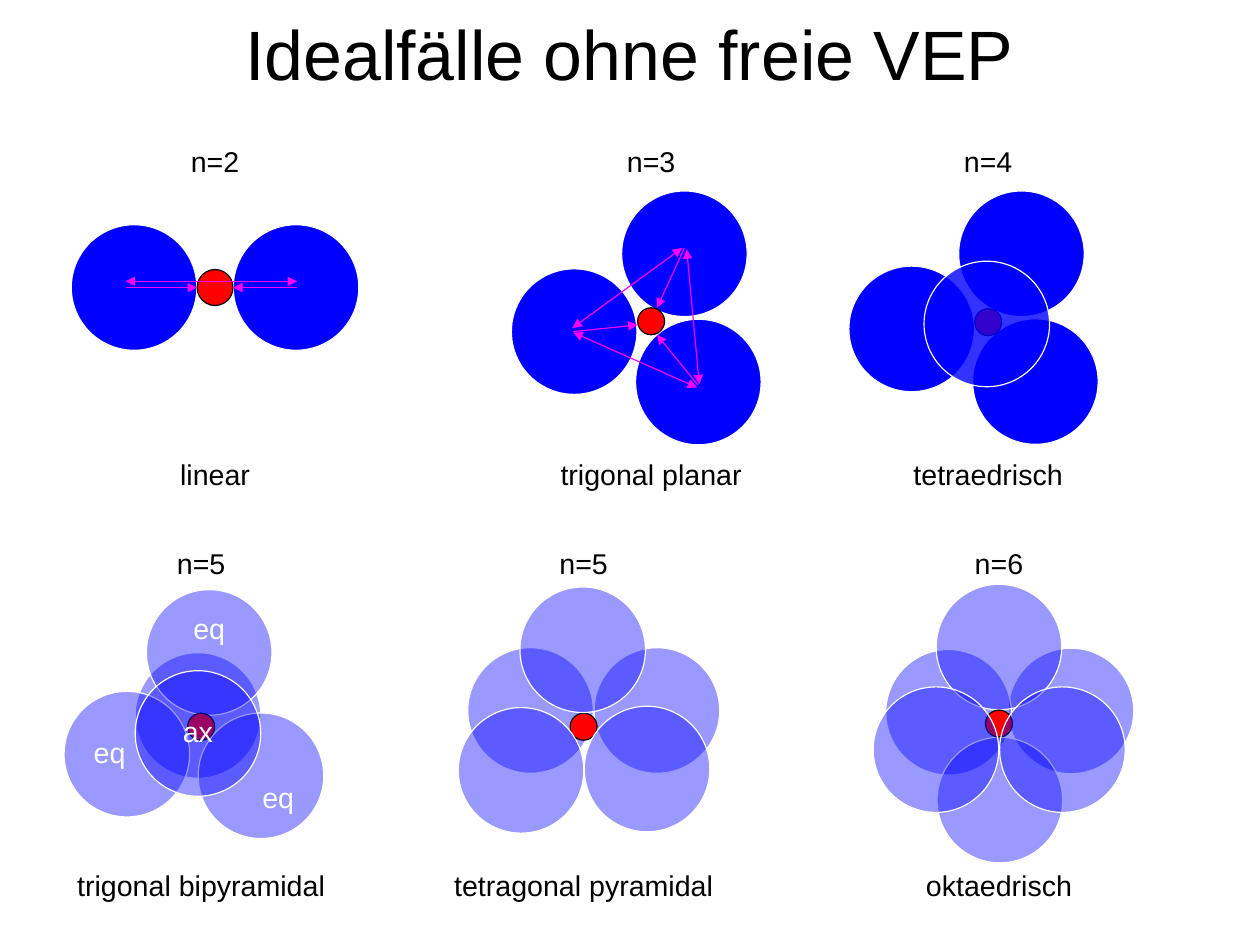
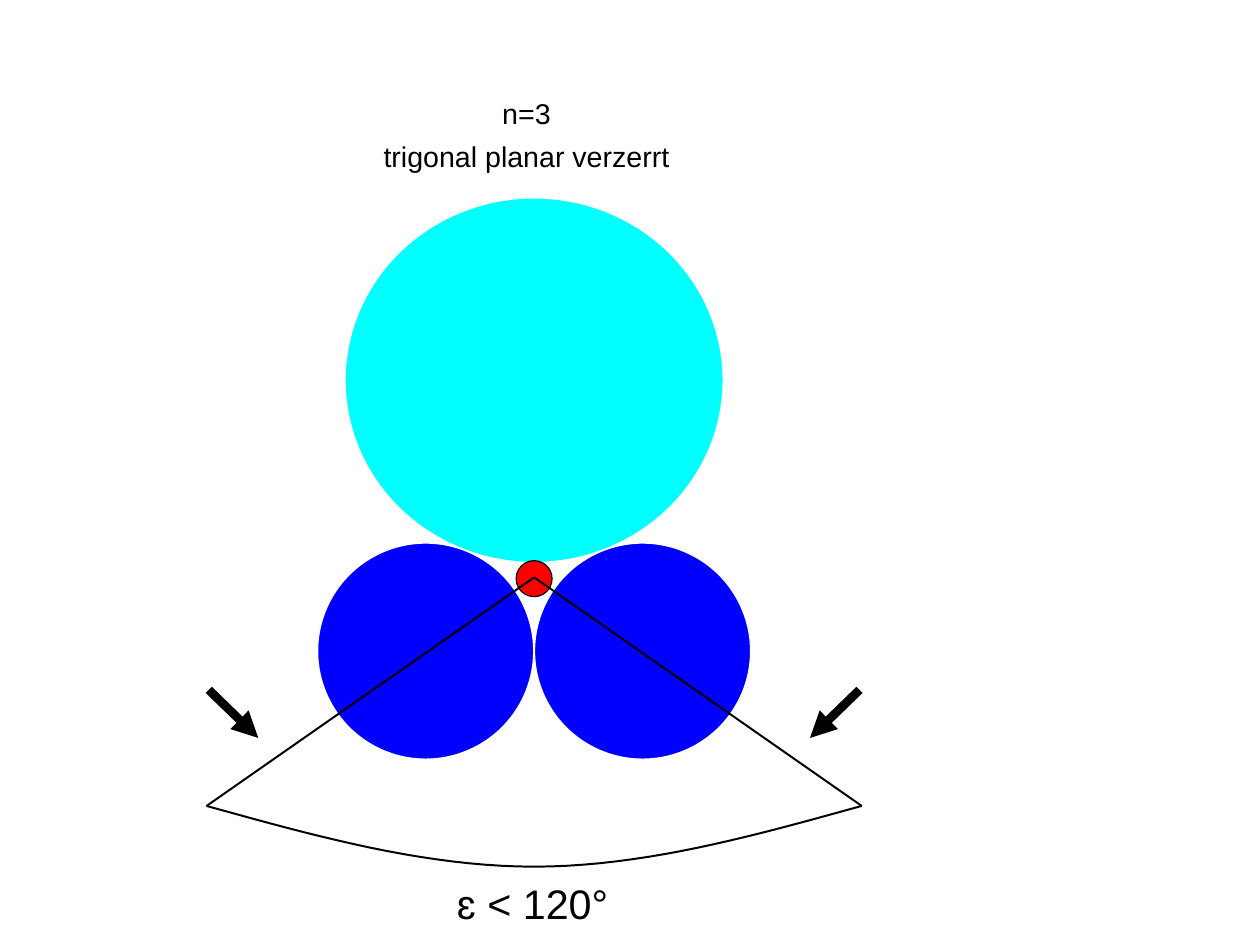
from dataclasses import dataclass, field

import pptx
import pptx.dml.color
import pptx.enum.shapes
import pptx.enum.text
import pptx.oxml
import pptx.oxml.ns
import pptx.util

Cm, Pt = pptx.util.Cm, pptx.util.Pt
qn = pptx.oxml.ns.qn
ALIGN = pptx.enum.text.PP_ALIGN
ANCHOR = pptx.enum.text.MSO_ANCHOR


@dataclass(frozen=True)
class Theme:
    font: str = "Arial"
    title_size: float = 44
    angle_size: float = 26
    label_size: float = 18
    line_spacing: float = 0.93
    black: str = "000000"
    white: str = "FFFFFF"
    ligand: str = "0000FF"
    lone_pair: str = "00FFFF"
    nucleus: str = "FF0000"
    repulsion: str = "FF00FF"
    thin: float = 0.75
    wedge: float = 1.25
    thick: float = 5.5


THEME = Theme()
LABEL_HEIGHT = 0.97
PANEL_WIDTH = 7
SPHERE = 2.79
SMALL_NUCLEUS = 0.6
LARGE_NUCLEUS = 0.8


@dataclass(frozen=True)
class Box:
    left: float
    top: float
    width: float
    height: float

    @property
    def middle(self):
        return self.left + self.width / 2


@dataclass(frozen=True)
class Molecule:
    """Offsets are in cm, measured from the centre of the nucleus."""
    label: str
    caption: str
    box: Box
    drop: float                 # nucleus below the top of the box
    behind: list                # (dx, dy) or (dx, dy, text, align, anchor)
    front: list = field(default_factory=list)
    arrows: list = field(default_factory=list)  # (x1, y1, x2, y2, both ends)
    nucleus: float = SMALL_NUCLEUS
    alpha: int = 100
    front_alpha: int = 40


# Shared drawing helpers
def rgb(code):
    return pptx.dml.color.RGBColor.from_string(code)


def apply(target, **values):
    for name, value in values.items():
        setattr(target, name, value)


def write(frame, text, size, color=THEME.black, align=ALIGN.CENTER):
    paragraph = frame.paragraphs[0]
    apply(paragraph, text=text, alignment=align, line_spacing=THEME.line_spacing)
    font = paragraph.runs[0].font
    apply(font, name=THEME.font, size=Pt(size))
    font.color.rgb = rgb(color)


def add_label(shapes, text, middle, top, width=PANEL_WIDTH,
              height=LABEL_HEIGHT, size=THEME.label_size):
    label = shapes.add_textbox(Cm(middle - width / 2), Cm(top), Cm(width), Cm(height))
    apply(label.text_frame, word_wrap=True, margin_top=Cm(0.18),
          margin_left=Cm(0.25), margin_right=Cm(0.25), margin_bottom=Cm(0.13))
    write(label.text_frame, text, size)


def add_ball(shapes, x, y, width, fill, outline=THEME.white, height=None, alpha=100):
    height = height or width
    ball = shapes.add_shape(pptx.enum.shapes.MSO_SHAPE.OVAL, Cm(x - width / 2),
                            Cm(y - height / 2), Cm(width), Cm(height))
    ball.shadow.inherit = False
    ball.fill.solid()
    ball.fill.fore_color.rgb = rgb(fill)
    ball.line.color.rgb = rgb(outline)
    ball.line.width = Pt(THEME.thin)
    if alpha < 100:
        color = ball._element.spPr.find(f"{qn('a:solidFill')}/{qn('a:srgbClr')}")
        color.append(pptx.oxml.parse_xml(
            f'<a:alpha {pptx.oxml.ns.nsdecls("a")} val="{alpha * 1000}"/>'))
    return ball


def add_line(shapes, start, end, color, width, heads=()):
    line = shapes.add_connector(pptx.enum.shapes.MSO_CONNECTOR.STRAIGHT,
                                *(Cm(value) for value in (*start, *end)))
    line.line.color.rgb = rgb(color)
    line.line.width = Pt(width)
    declared = pptx.oxml.ns.nsdecls("a")
    for head in heads:
        line.line._get_or_add_ln().append(
            pptx.oxml.parse_xml(f'<a:{head} {declared} type="triangle"/>'))
    line._element.spPr.append(pptx.oxml.parse_xml(f"<a:effectLst {declared}/>"))


# Slide 1: ideal geometries
def add_title(slide, text, box):
    title = slide.shapes.title
    apply(title, left=Cm(box.left), top=Cm(box.top),
          width=Cm(box.width), height=Cm(box.height))
    apply(title.text_frame, vertical_anchor=ANCHOR.MIDDLE, word_wrap=True,
          margin_left=0, margin_right=0, margin_top=Cm(0.1), margin_bottom=0)
    write(title.text_frame, text, THEME.title_size)


def add_ligands(shapes, ligands, x, y, alpha):
    for dx, dy, *caption in ligands:
        ball = add_ball(shapes, x + dx, y + dy, SPHERE, THEME.ligand, alpha=alpha)
        if caption:
            text, align, anchor = caption
            apply(ball.text_frame, word_wrap=False, vertical_anchor=anchor)
            write(ball.text_frame, text, THEME.label_size, THEME.white, align)


def add_molecule(slide, molecule):
    box = molecule.box
    shapes = slide.shapes.add_group_shape().shapes
    x, y = box.middle, box.top + molecule.drop
    add_label(shapes, molecule.label, x, box.top)
    add_label(shapes, molecule.caption, x, box.top + box.height - LABEL_HEIGHT)
    # Ligands behind, nucleus, ligands in front
    add_ligands(shapes, molecule.behind, x, y, molecule.alpha)
    add_ball(shapes, x, y, molecule.nucleus, THEME.nucleus, THEME.black)
    add_ligands(shapes, molecule.front, x, y, molecule.front_alpha)
    # Repulsion and bond arrows
    for x1, y1, x2, y2, both in molecule.arrows:
        add_line(shapes, (x + x1, y + y1), (x + x2, y + y2), THEME.repulsion,
                 THEME.thin, ("headEnd", "tailEnd") if both else ("tailEnd",))


def upper_panel(middle):
    return Box(middle - PANEL_WIDTH / 2, 3.08, PANEL_WIDTH, 7.93)


def lower_panel(middle):
    return Box(middle - PANEL_WIDTH / 2, 12.02, PANEL_WIDTH, 8.12)


MOLECULES = [
    Molecule("n=2", "linear", upper_panel(4.78), 3.31,
             behind=[(-1.8, 0), (1.8, 0)], nucleus=LARGE_NUCLEUS,
             arrows=[(1.82, -0.14, -1.99, -0.14, True),
                     (1.82, 0, 0.4, 0, False),
                     (-1.99, 0, -0.4, 0, False)]),
    Molecule("n=3", "trigonal planar", upper_panel(14.47), 4.06,
             behind=[(0.74, -1.5), (1.05, 1.35), (-1.71, 0.23)],
             arrows=[(-1.73, 0.23, -0.3, 0.08, False),
                     (1.04, 1.42, 0.13, 0.3, False),
                     (0.74, -1.63, 0.13, -0.3, False),
                     (-1.75, 0.15, 0.69, -1.63, True),
                     (1.07, 1.4, 0.79, -1.6, True),
                     (1.02, 1.47, -1.73, 0.25, True)]),
    Molecule("n=4", "tetraedrisch", upper_panel(21.96), 4.08,
             behind=[(0.74, -1.52), (1.05, 1.32), (-1.7, 0.15)],
             front=[(-0.03, 0.04)], front_alpha=80),
    Molecule("n=5", "trigonal bipyramidal", lower_panel(4.47), 4.13, alpha=40,
             behind=[(-0.07, -0.25),
                     (0.18, -1.65, "eq", ALIGN.CENTER, ANCHOR.TOP),
                     (1.33, 1.09, "eq", ALIGN.RIGHT, ANCHOR.BOTTOM),
                     (-1.65, 0.61, "eq", ALIGN.LEFT, ANCHOR.MIDDLE)],
             front=[(-0.07, 0.15, "ax", ALIGN.CENTER, ANCHOR.MIDDLE)]),
    Molecule("n=5", "tetragonal pyramidal", lower_panel(12.97), 4.13, alpha=40,
             behind=[(-1.18, -0.36), (1.63, -0.36)],
             front=[(-0.02, -1.71), (1.41, 0.94), (-1.39, 0.97)]),
    Molecule("n=6", "oktaedrisch", lower_panel(22.2), 4.06, alpha=40,
             behind=[(1.6, -0.28), (-1.12, -0.25), (0, -1.7), (0.02, 1.7)],
             front=[(1.41, 0.58), (-1.4, 0.58)]),
]


def build_ideal_cases(slide):
    add_title(slide, "Idealfälle ohne freie VEP", Box(1.4, 0, 25.2, 2.44))
    for molecule in MOLECULES:
        add_molecule(slide, molecule)


# Slide 2: distorted geometry
def add_arc(shapes, middle, top, reach, depth, steps=40):
    points = []
    for step in range(steps + 1):
        position = 2 * step / steps - 1
        side = abs(position)
        sag = depth * (1 - 1.5 * side ** 2 + 0.5 * side ** 3)
        points.append((Cm(middle + position * reach), Cm(top + sag)))
    builder = shapes.build_freeform(*points[0])
    builder.add_line_segments(points[1:], close=False)
    arc = builder.convert_to_shape()
    arc.shadow.inherit = False
    arc.fill.background()
    arc.line.color.rgb = rgb(THEME.black)
    arc.line.width = Pt(THEME.wedge)


def add_distorted_molecule(slide, box):
    shapes = slide.shapes
    x, reach = box.middle, box.width / 2
    apex, wedge_end = box.top + 10.8, box.top + 15.88
    # Headings
    for row, text in enumerate(("n=3", "trigonal planar verzerrt")):
        add_label(shapes, text, x - 0.17, box.top + row * 0.94)
    # Lone pair, nucleus and ligands
    add_ball(shapes, x, box.top + 6.42, 8.4, THEME.lone_pair, height=8.1)
    add_ball(shapes, x, apex + 0.03, LARGE_NUCLEUS, THEME.nucleus, THEME.black)
    for side in (1, -1):
        add_ball(shapes, x + side * 2.41, apex + 1.64, 4.8, THEME.ligand)
    # Bond angle and the arrows that narrow it
    for side in (1, -1):
        add_line(shapes, (x, apex), (x + side * reach, wedge_end),
                 THEME.black, THEME.wedge)
        add_line(shapes, (x + side * 7.23, apex + 2.5),
                 (x + side * 6.13, apex + 3.57),
                 THEME.black, THEME.thick, ("tailEnd",))
    add_arc(shapes, x, wedge_end, reach, 1.35)
    add_label(shapes, "ɛ < 120°", x - 0.03, box.top + box.height - 1.27,
              width=6, height=1.27, size=THEME.angle_size)


def main():
    deck = pptx.Presentation()
    apply(deck, slide_width=Cm(28), slide_height=Cm(21))
    title_only, blank = deck.slide_layouts[5], deck.slide_layouts[6]
    build_ideal_cases(deck.slides.add_slide(title_only))
    add_distorted_molecule(deck.slides.add_slide(blank), Box(4.59, 2.03, 14.56, 18.67))
    deck.save("out.pptx")


if __name__ == "__main__":
    main()
